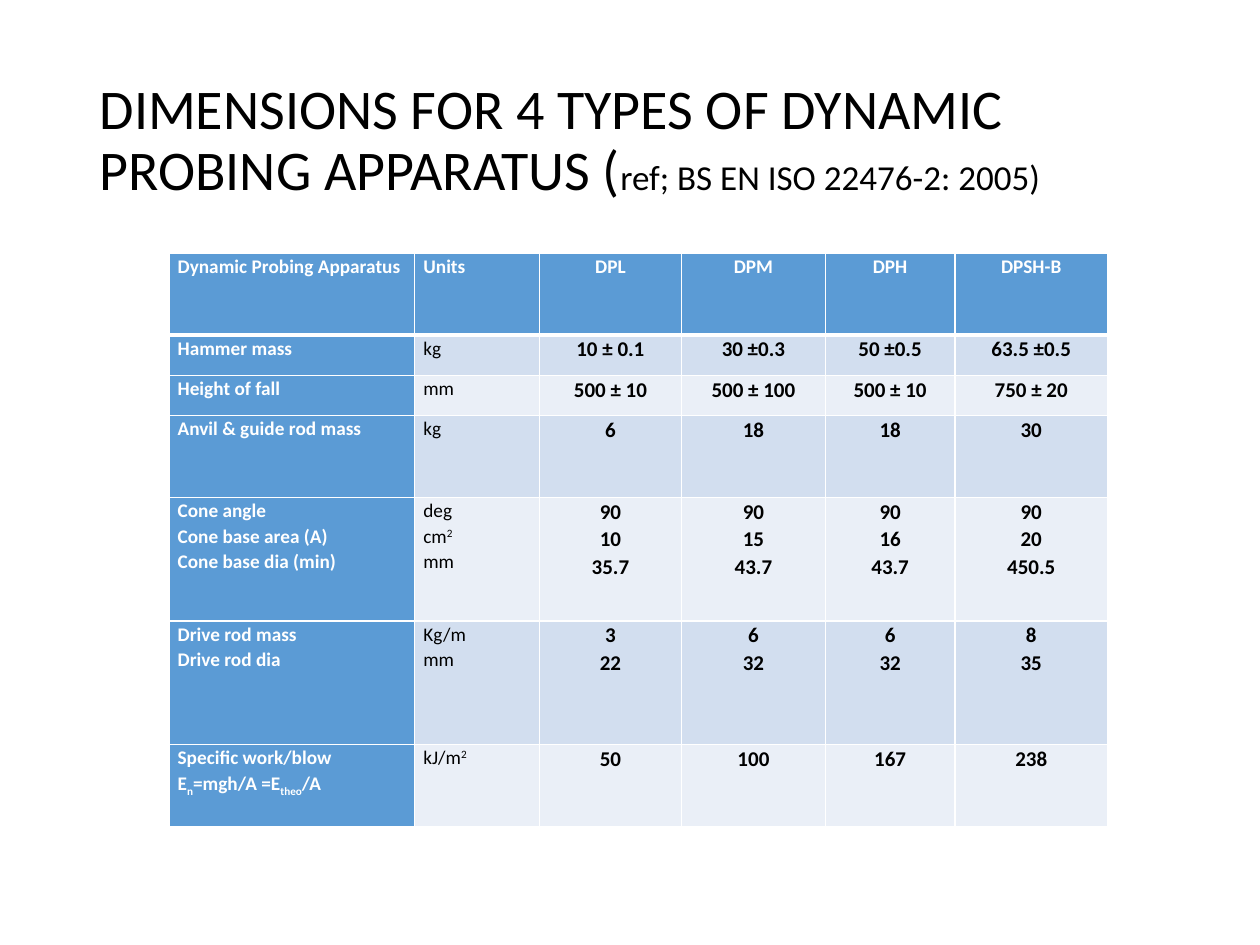
from dataclasses import dataclass

import pptx
import pptx.dml.color
import pptx.enum.text
import pptx.oxml
import pptx.oxml.ns
import pptx.util
from pptx.util import Inches

Align = pptx.enum.text.PP_ALIGN
Anchor = pptx.enum.text.MSO_ANCHOR


@dataclass(frozen=True)
class Theme:
    font: str = "Calibri"
    ink: str = "000000"
    white: str = "FFFFFF"
    head: str = "5B9BD5"
    bands: tuple = ("D2DEEF", "EAEFF7")
    title: int = 32
    note: int = 20
    label: int = 11
    value: int = 12
    thin: int = 1
    thick: int = 3


SHIFT = {"^": "30000", "_": "-25000"}
WIDTHS = (1.95, 0.99, 1.13, 1.14, 1.03, 1.21)
HEIGHTS = (0.65, 0.32, 0.32, 0.65, 0.98, 0.98, 0.65)
ROWS = (
    ("Dynamic Probing Apparatus", "Units", "DPL", "DPM", "DPH", "DPSH-B"),
    ("Hammer mass", "kg", "10 ± 0.1", "30 ±0.3", "50 ±0.5", "63.5 ±0.5"),
    ("Height of fall", "mm", "500 ± 10", "500 ± 100", "500 ± 10", "750 ± 20"),
    ("Anvil & guide rod mass", "kg", "6", "18", "18", "30"),
    ("Cone angle\nCone base area (A)\nCone base dia (min)", "deg\ncm|^2\nmm",
     "90\n10\n35.7", "90\n15\n43.7", "90\n16\n43.7", "90\n20\n450.5"),
    ("Drive rod mass\nDrive rod dia", "Kg/m\nmm",
     "3\n22", "6\n32", "6\n32", "8\n35"),
    ("Specific work/blow\nE|_n|=mgh/A =E|_theo|/A", "kJ/m|^2",
     "50", "100", "167", "238"),
)


class Deck:
    def __init__(self, theme):
        self.theme = theme
        self.file = pptx.Presentation()
        self.file.slide_width = Inches(10)
        self.file.slide_height = Inches(7.5)
        self.slide = self.file.slides.add_slide(self.file.slide_layouts[5])

    def color(self, code):
        return pptx.dml.color.RGBColor.from_string(code)

    def run(self, para, text, size, color, bold=False):
        run = para.add_run()
        run.text = text.lstrip("^_")
        font = run.font
        font.name = self.theme.font
        font.size = pptx.util.Pt(size)
        font.bold = bold
        font.color.rgb = self.color(color)
        if text[0] in SHIFT:
            run._r.get_or_add_rPr().set("baseline", SHIFT[text[0]])

    def title(self, box, parts):
        shape = self.slide.shapes.title
        shape.left, shape.top, shape.width, shape.height = map(Inches, box)
        frame = shape.text_frame
        frame.word_wrap = True
        frame.vertical_anchor = Anchor.MIDDLE
        para = frame.paragraphs[0]
        para.alignment = Align.LEFT
        para.line_spacing = 0.9
        for text, size in parts:
            self.run(para, text, size, self.theme.ink)

    def border(self, cell, top, bottom):
        thin = self.theme.thin
        props = cell._tc.get_or_add_tcPr()
        for side, width in zip("LRTB", (thin, thin, top, bottom)):
            props.append(pptx.oxml.parse_xml(
                f'<a:ln{side} {pptx.oxml.ns.nsdecls("a")} w="{pptx.util.Pt(width)}">'
                f'<a:solidFill><a:srgbClr val="{self.theme.white}"/></a:solidFill>'
                f'</a:ln{side}>'))

    def cell(self, cell, text, row, col):
        look = self.theme
        head = row == 0 or col == 0
        self.border(cell, look.thick if row == 1 else look.thin,
                    look.thick if row == 0 else look.thin)
        cell.fill.solid()
        fill = look.head if head else look.bands[(row - 1) % 2]
        cell.fill.fore_color.rgb = self.color(fill)
        cell.margin_left = cell.margin_right = Inches(0.07)
        cell.margin_top = cell.margin_bottom = 0
        cell.vertical_anchor = Anchor.TOP
        size = look.value if row and col > 1 else look.label
        ink = look.white if head else look.ink
        frame = cell.text_frame
        for num, line in enumerate(text.split("\n")):
            para = frame.add_paragraph() if num else frame.paragraphs[0]
            para.alignment = Align.CENTER if col > 1 else Align.LEFT
            para.line_spacing = 1.07
            for part in line.split("|"):
                self.run(para, part, size, ink, head or col > 1)

    def table(self, left, top, widths, heights, rows):
        frame = self.slide.shapes.add_table(
            len(rows), len(widths), Inches(left), Inches(top),
            Inches(sum(widths)), Inches(sum(heights)))
        table = frame.table
        table.horz_banding = False
        table.first_row = True
        table.first_col = True
        for col, width in zip(table.columns, widths):
            col.width = Inches(width)
        for row, height in zip(table.rows, heights):
            row.height = Inches(height)
        for r, row in enumerate(rows):
            for c, text in enumerate(row):
                self.cell(table.cell(r, c), text, r, c)


def main():
    theme = Theme()
    deck = Deck(theme)
    deck.title((0.69, 0.4, 8.62, 1.45), (
        ("DIMENSIONS FOR 4 TYPES OF DYNAMIC PROBING APPARATUS (", theme.title),
        ("ref; BS EN ISO 22476-2: 2005)", theme.note)))
    deck.table(1.34, 2.01, WIDTHS, HEIGHTS, ROWS)
    deck.file.save("out.pptx")


if __name__ == "__main__":
    main()
